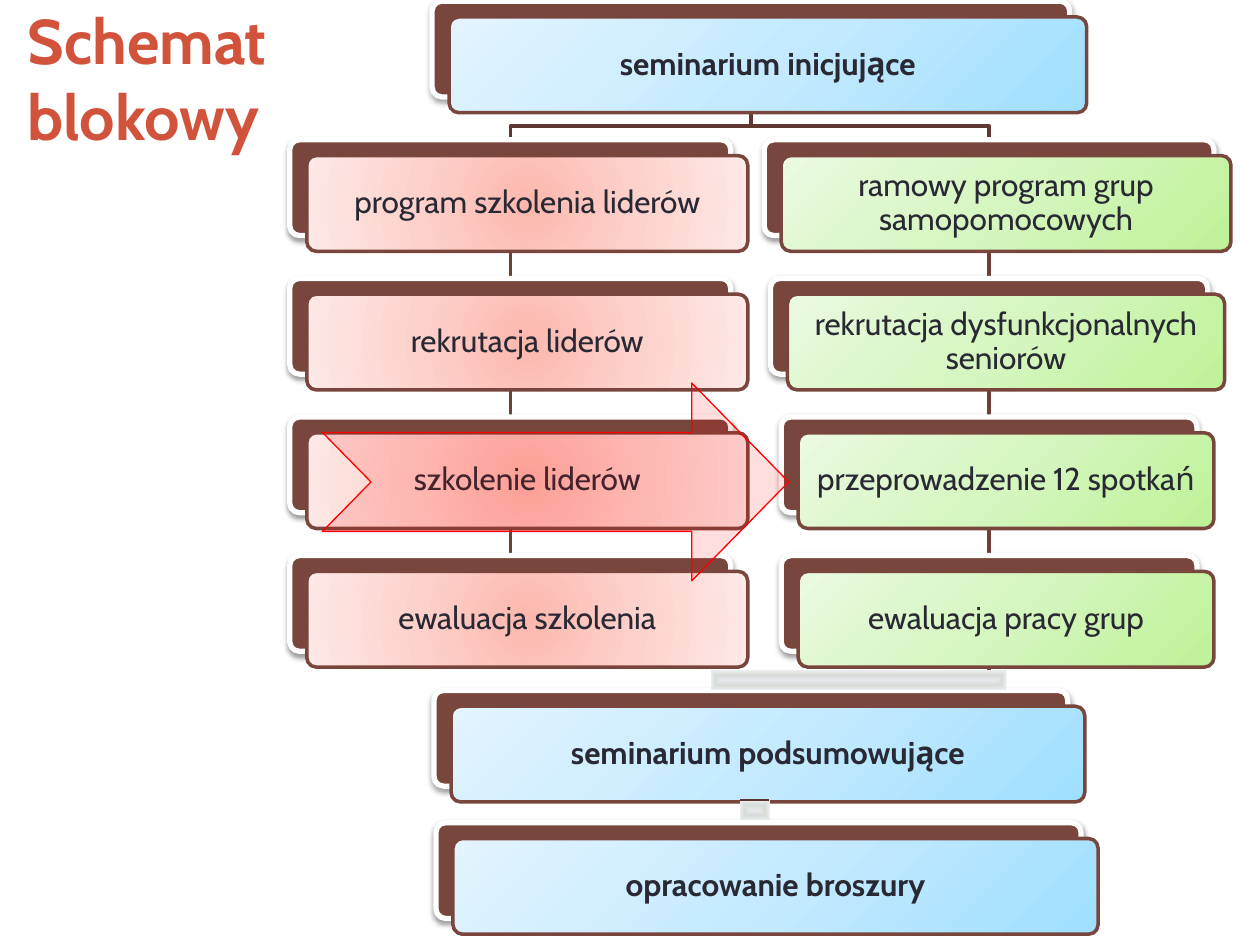
from lxml.etree import SubElement
from pptx import Presentation
from pptx.dml.color import RGBColor
from pptx.enum.shapes import MSO_CONNECTOR, MSO_SHAPE
from pptx.enum.text import MSO_ANCHOR, PP_ALIGN
from pptx.oxml import parse_xml
from pptx.oxml.ns import nsdecls, qn
from pptx.util import Inches, Pt

hues = {
    "title": "D2533C", "text": "292934", "back": "79463D", "edge": "FFFFFF",
    "link": "6E4037", "fork": "613831", "dash": "5B352E", "arrow": "FF0000",
}
fades = {
    "blue": ["A0DFFF", "C5EAFF", "E3F4FF"],
    "red": ["FCB8AE", "FDD2CC", "FDE9E6"],
    "green": ["BEF297", "D5F6C0", "EAFAE0"],
    "grey": ["E6E8EC", "D6DDD9", "EBEEEC"],
}
round_path = '<a:path path="{}"><a:fillToRect l="50000" t="50000" r="50000" b="50000"/></a:path>'
slant = '<a:lin ang="13500000" scaled="0"/>'
modes = {"blue": slant, "green": slant,
         "red": round_path.format("circle"), "grey": round_path.format("shape")}

deck = Presentation()
deck.slide_width, deck.slide_height = Inches(10), Inches(7.5)
col, row = deck.slide_width // 100, deck.slide_height // 75
slide = deck.slides.add_slide(deck.slide_layouts[6])
shapes = slide.shapes


def block(kind, x, y, w, h, fill=None, line=None, width=0):
    shape = shapes.add_shape(kind, int(x * col), int(y * row), int(w * col), int(h * row))
    shape.shadow.inherit = False
    if fill in fades:
        shape.fill.background()
        stops = "".join(f'<a:gs pos="{n * 50000}"><a:srgbClr val="{c}"/></a:gs>'
                        for n, c in enumerate(fades[fill]))
        grad = parse_xml(f'<a:gradFill {nsdecls("a")} rotWithShape="1"><a:gsLst>{stops}</a:gsLst>'
                         f'{modes[fill]}</a:gradFill>')
        props = shape._element.spPr
        props.replace(props.find(qn("a:noFill")), grad)
    else:
        shape.fill.solid()
        shape.fill.fore_color.rgb = RGBColor.from_string(hues[fill])
    if line:
        shape.line.color.rgb = RGBColor.from_string(hues[line])
        shape.line.width = Pt(width)
    else:
        shape.line.fill.background()
    return shape


def write(para, text, size, hue, bold):
    run = para.add_run()
    run.text = text
    run.font.name, run.font.size, run.font.bold = "Cabin", Pt(size), bold
    run.font.color.rgb = RGBColor.from_string(hues[hue])


box = shapes.add_textbox(int(1.2 * col), 0, int(26.8 * col), int(12.3 * row))
box.text_frame.word_wrap = True
box.text_frame.vertical_anchor = MSO_ANCHOR.MIDDLE
para = box.text_frame.paragraphs[0]
write(para, "Schemat", 36, "title", True)
para.add_line_break()
write(para, "blokowy", 36, "title", True)

mid, left, right, last = 59.6, 40.5, 78.5, 60.2
tall, top, step = 7.6, 11.1, 11
rows = [top + step * n for n in range(4)]
foot, end = 54.8, 65.3

forks = [
    ("fork", (mid, 7.6), 10, (left, top)),
    ("fork", (mid, 7.6), 10, (right, top)),
    ("link", (right, rows[-1] + tall), 53.7, (mid, foot)),
    ("link", (mid, foot + tall), 64.2, (last, end)),
]
for hue, (x, y), bend, (x2, y2) in forks:
    pen = shapes.build_freeform(int(x * col), int(y * row))
    pen.add_line_segments([(int(a * col), int(b * row))
                           for a, b in [(x, bend), (x2, bend), (x2, y2)]], close=False)
    fork = pen.convert_to_shape()
    fork.fill.background()
    fork.line.color.rgb = RGBColor.from_string(hues[hue])
    fork.line.width = Pt(2)
    fork.shadow.inherit = False

links = []
for n in range(6):
    link = shapes.add_connector(MSO_CONNECTOR.STRAIGHT, 0, 0, 0, 0)
    link.line.color.rgb = RGBColor.from_string(hues["link"])
    link.line.width = Pt(2)
    SubElement(link._element.spPr, qn("a:effectLst"))
    links.append(link)

reds = ["program szkolenia liderów", "rekrutacja liderów",
        "szkolenie liderów", "ewaluacja szkolenia"]
greens = [("ramowy program grup samopomocowych", 35.7),
          ("rekrutacja dysfunkcjonalnych seniorów", 34.7),
          ("przeprowadzenie 12 spotkań", 33), ("ewaluacja pracy grup", 33)]
cards = [("blue", mid, 0.1, 50.6, "seminarium inicjujące")]
cards += [("red", left, y, 35, text) for y, text in zip(rows, reds)]
cards += [("green", right, y, w, text) for y, (text, w) in zip(rows, greens)]
cards += [("blue", mid, foot, 50.3, "seminarium podsumowujące"),
          ("blue", last, end, 51.2, "opracowanie broszury")]

backs = []
for tone, x, y, w, text in cards:
    back = block(MSO_SHAPE.ROUNDED_RECTANGLE, x - w / 2, y, w, tall, "back", "edge", 3)
    glow = SubElement(back._element.spPr.find(qn("a:effectLst")), qn("a:outerShdw"),
                      blurRad=str(Pt(3.1)), dist=str(Pt(1.6)), dir="5400000", rotWithShape="0")
    shade = SubElement(glow, qn("a:srgbClr"), val="000000")
    SubElement(shade, qn("a:alpha"), val="38000")
    front = block(MSO_SHAPE.ROUNDED_RECTANGLE, x - w / 2 + 1.35, y + 1.25, w, tall,
                  tone, "back", 2)
    for card in (back, front):
        card.adjustments[0] = 0.1
    frame = front.text_frame
    frame.word_wrap = True
    frame.vertical_anchor = MSO_ANCHOR.MIDDLE
    frame.margin_left = frame.margin_right = Inches(0.09)
    frame.margin_top = frame.margin_bottom = Inches(0.07)
    para = frame.paragraphs[0]
    para.alignment, para.line_spacing = PP_ALIGN.CENTER, 0.9
    write(para, text, 18, "text", tone == "blue")
    backs.append(back)

pairs = [(n, n + 1) for n in (1, 2, 3, 5, 6, 7)]
for link, (a, b) in zip(links, pairs):
    link.begin_connect(backs[a], 2)
    link.end_connect(backs[b], 0)

for x, y, w in [(58.7, 63.5, 2.4), (56.4, 53.2, 23.5)]:
    block(MSO_SHAPE.RECTANGLE, x, y, w, 1.6, "grey")

arrow = block(MSO_SHAPE.NOTCHED_RIGHT_ARROW, 25.6, 30.4, 37, 15.7, "arrow", "arrow", 0.75)
arrow.adjustments[0], arrow.adjustments[1] = 0.5, 0.49
tint = arrow._element.spPr.find(qn("a:solidFill"))[0]
SubElement(tint, qn("a:alpha"), val="13000")

dash = shapes.add_connector(MSO_CONNECTOR.STRAIGHT, int(58.7 * col), int(63.5 * row),
                            int(61 * col), int(63.5 * row))
dash.line.color.rgb = RGBColor.from_string(hues["dash"])
dash.line.width = Pt(1.5)
SubElement(dash._element.spPr, qn("a:effectLst"))

deck.save("out.pptx")
